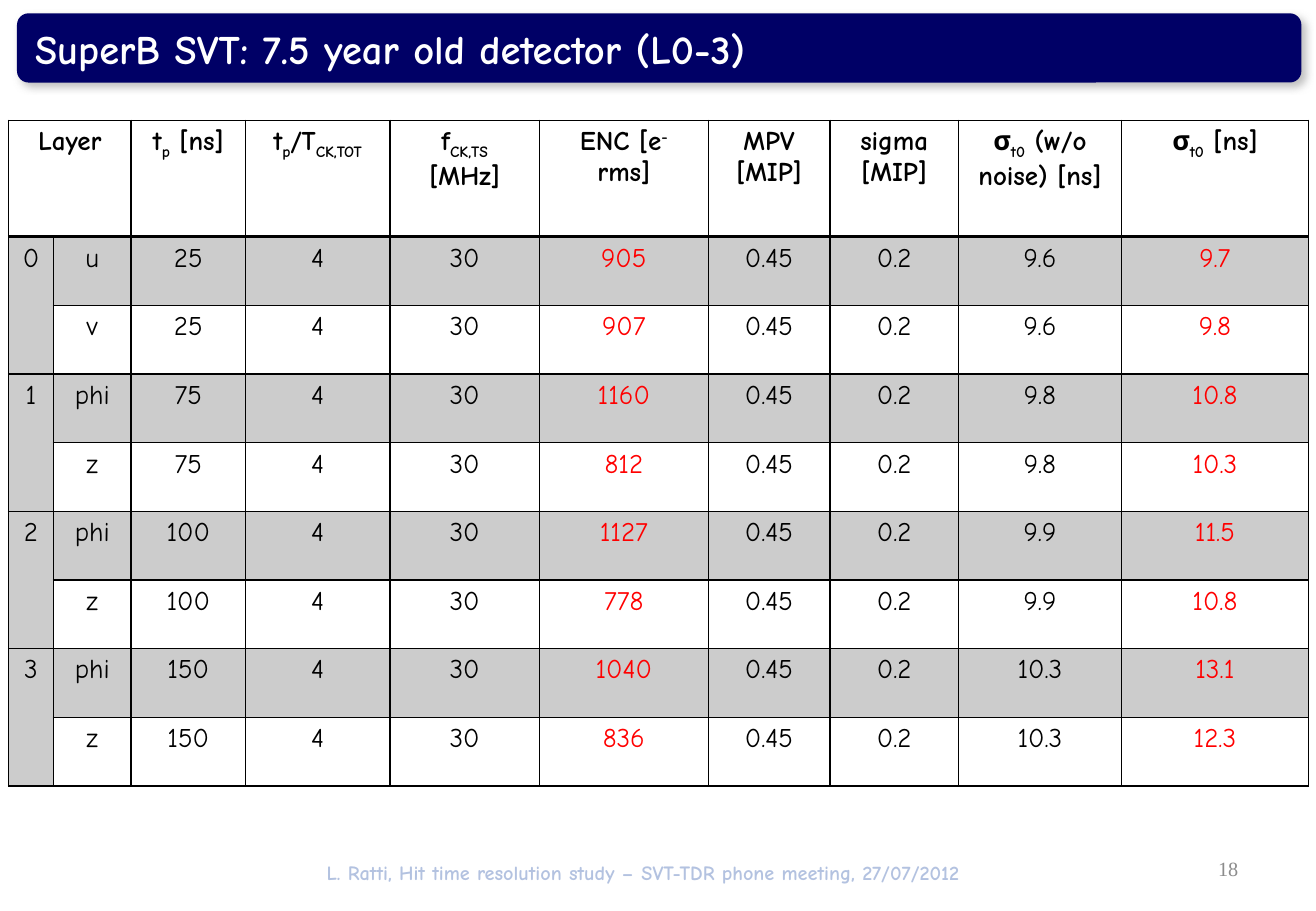
from lxml import etree
from pptx import Presentation
from pptx import util as u
from pptx.dml.color import RGBColor
from pptx.enum import shapes, text
from pptx.oxml import parse_xml
from pptx.oxml.ns import qn

PX = 4572  # 200 px to the inch
BLACK = RGBColor(0x00, 0x00, 0x00)
WHITE = RGBColor(0xFF, 0xFF, 0xFF)
RED = RGBColor(0xFF, 0x00, 0x00)
NAVY = RGBColor(0x00, 0x00, 0x66)
BLUE = RGBColor(0x00, 0x33, 0x99)
GREY = RGBColor(0x8C, 0x8C, 0x8C)
BAND = RGBColor(0xCC, 0xCC, 0xCC)
NS = 'xmlns:a="http://schemas.openxmlformats.org/drawingml/2006/main"'
BASELINES = {"_": "-25000", "^": "30000"}
CENTER = text.PP_ALIGN.CENTER


def write(tf, words, size=16, color=BLACK, bold=False, align=CENTER, font="Comic Neue"):
    """Fill the first paragraph; | parts runs, a leading _ lowers one and ^ raises it."""
    tf.word_wrap = True
    p = tf.paragraphs[0]
    p.alignment = align
    for part in words.split("|"):
        r = p.add_run()
        r.text = part.lstrip("_^")
        r.font.name, r.font.size, r.font.bold = font, u.Pt(size), bold
        r.font.color.rgb = color
        if part[0] in BASELINES:
            r.font._element.set("baseline", BASELINES[part[0]])


def box(kind, x, y, w, h, color):
    sp = slide.shapes.add_shape(kind, x * PX, y * PX, w * PX, h * PX)
    sp.shadow.inherit = False
    sp.fill.solid()
    sp.fill.fore_color.rgb = color
    sp.line.fill.background()
    return sp


prs = Presentation()
prs.slide_width, prs.slide_height = 2166 * PX, 1500 * PX
slide = prs.slides.add_slide(prs.slide_layouts[6])

# Footer under a translucent white veil
footer = slide.shapes.add_textbox(382 * PX, 1406 * PX, 1354 * PX, 60 * PX)
write(footer.text_frame, "L. Ratti, Hit time resolution study – SVT-TDR phone meeting, 27/07/2012",
      size=12, color=BLUE, bold=True)
veil = box(shapes.MSO_SHAPE.RECTANGLE, 16, 1288, 2134, 200, WHITE)
veil_color = veil._element.spPr.find(qn("a:solidFill"))[0]
etree.SubElement(veil_color, qn("a:alpha"), val="70000")

number = slide.shapes.add_textbox(1552 * PX, 1390 * PX, 506 * PX, 80 * PX)
number.text_frame.vertical_anchor = text.MSO_ANCHOR.MIDDLE
write(number.text_frame, "18", size=12, color=GREY, align=text.PP_ALIGN.RIGHT, font="Times New Roman")

# Title bar
bar = box(shapes.MSO_SHAPE.ROUNDED_RECTANGLE, 28, 22, 2114, 114, NAVY)
bar._element.spPr.find(qn("a:effectLst")).append(parse_xml(
    f'<a:outerShdw {NS} blurRad="{u.Pt(5)}" dist="{u.Pt(3)}" dir="2700000" algn="tl" rotWithShape="0">'
    '<a:srgbClr val="808080"><a:alpha val="50000"/></a:srgbClr></a:outerShdw>'))
title = slide.shapes.add_textbox(38 * PX, 30 * PX, 2030 * PX, 100 * PX)
write(title.text_frame, "SuperB SVT: 7.5 year old detector (L0-3)",
      size=24, color=WHITE, bold=True, align=text.PP_ALIGN.LEFT)

# Detector table
WIDTHS = [74, 128, 188, 238, 246, 278, 200, 212, 268, 308]
HEADER_H, ROW_H = 192, 113
RED_COLUMNS = (5, 9)
rows = [
    ["Layer", "", "t|_p| [ns]", "t|_p|/T|_CK,TOT", "f|_CK,TS| [MHz]", "ENC [e|^- |rms]",
     "MPV [MIP]", "sigma [MIP]", "σ|_t0| (w/o noise) [ns]", "σ|_t0| [ns]"],
    ["0", "u", "25", "4", "30", "905", "0.45", "0.2", "9.6", "9.7"],
    ["", "v", "25", "4", "30", "907", "0.45", "0.2", "9.6", "9.8"],
    ["1", "phi", "75", "4", "30", "1160", "0.45", "0.2", "9.8", "10.8"],
    ["", "z", "75", "4", "30", "812", "0.45", "0.2", "9.8", "10.3"],
    ["2", "phi", "100", "4", "30", "1127", "0.45", "0.2", "9.9", "11.5"],
    ["", "z", "100", "4", "30", "778", "0.45", "0.2", "9.9", "10.8"],
    ["3", "phi", "150", "4", "30", "1040", "0.45", "0.2", "10.3", "13.1"],
    ["", "z", "150", "4", "30", "836", "0.45", "0.2", "10.3", "12.3"],
]
table_h = HEADER_H + ROW_H * (len(rows) - 1)
table = slide.shapes.add_table(len(rows), len(WIDTHS), 14 * PX, 198 * PX,
                               sum(WIDTHS) * PX, table_h * PX).table
table.first_row = table.horz_banding = False
for column, width in zip(table.columns, WIDTHS):
    column.width = width * PX

for i, row in enumerate(rows):
    table.rows[i].height = (ROW_H if i else HEADER_H) * PX
    for j, words in enumerate(row):
        cell = table.cell(i, j)
        if i % 2 or (i and j == 0):
            cell.fill.solid()
            cell.fill.fore_color.rgb = BAND
        else:
            cell.fill.background()
        if words:
            color = RED if i and j in RED_COLUMNS else BLACK
            write(cell.text_frame, words, color=color, bold=i == 0)
        for k, side in enumerate("LRTB"):
            under_header = (i, side) in ((0, "B"), (1, "T"))
            cell._tc.get_or_add_tcPr().insert(k, parse_xml(
                f'<a:ln{side} {NS} w="{u.Pt(2 if under_header else 1)}">'
                f'<a:solidFill><a:srgbClr val="{BLACK}"/></a:solidFill></a:ln{side}>'))

table.cell(0, 0).merge(table.cell(0, 1))
for i in range(1, len(rows), 2):
    table.cell(i, 0).merge(table.cell(i + 1, 0))

prs.save("out.pptx")
